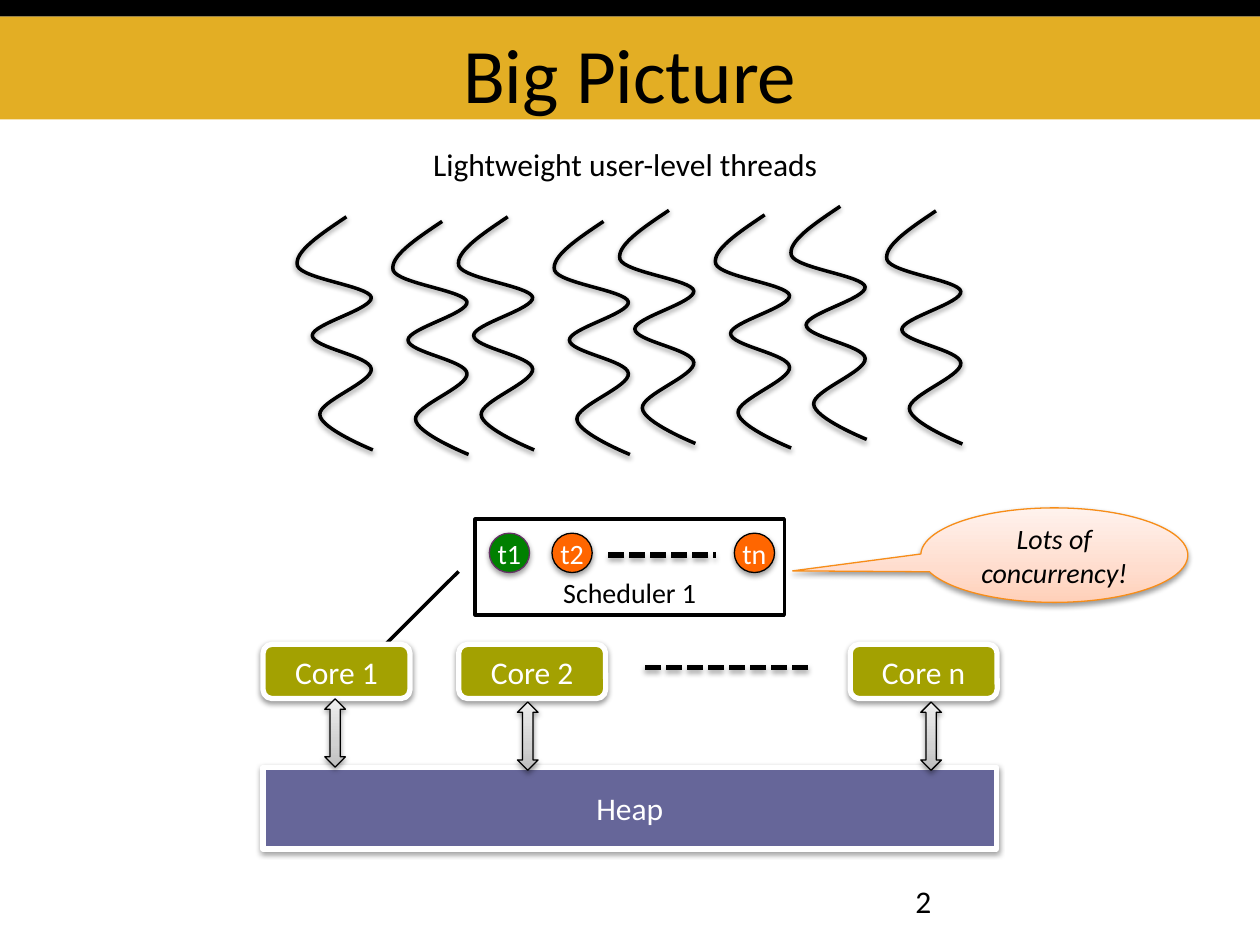
from dataclasses import dataclass

import lxml.etree
import pptx
import pptx.dml.color
import pptx.enum.dml
import pptx.enum.shapes
import pptx.enum.text
import pptx.oxml.ns
import pptx.util

Pt = pptx.util.Pt
qn = pptx.oxml.ns.qn
SHAPE = pptx.enum.shapes.MSO_SHAPE
ANCHOR = pptx.enum.text.MSO_ANCHOR
ALIGN = pptx.enum.text.PP_ALIGN

FONT = "Calibri"
BLACK, WHITE, ORANGE = "000000", "FFFFFF", "FF6600"
PEACH = ((0, "FFD0B9"), (35, "FFDDCE"), (100, "FFF2ED"))
GREY = ((0, "BDBDBD"), (35, "D1D1D1"), (100, "EEEEEE"))
UNITS = 100  # thread path units per point

# One thread: cubic curves (control, control, end) relative to its start
WAVE = (
    ((-15.1, 10.1), (-30.2, 20.2), (-28, 28)),
    ((-25.2, 35.5), (13, 39.6), (14.2, 46)),
    ((15.1, 52.7), (-19.5, 61.2), (-19.5, 67.8)),
    ((-19.5, 74.8), (13.7, 79.4), (14.2, 86.9)),
    ((15.1, 94.5), (-15.8, 105.3), (-15.2, 113)),
    ((-15.1, 121), (15.1, 133.2), (15.1, 133.2)),
)


@dataclass
class Box:
    kind: int
    left: float
    top: float
    width: float
    height: float
    fill: str | tuple
    line: str | None = None
    line_width: float = 0.75
    text: str = ""
    size: int = 18
    color: str = WHITE
    italic: bool = False
    anchor: int = ANCHOR.MIDDLE
    tight: bool = False
    shadow: bool = True
    adjust: tuple = ()


def rgb(value: str) -> pptx.dml.color.RGBColor:
    return pptx.dml.color.RGBColor.from_string(value)


def add_shadow(properties, alpha: int = 38, blur: float = 3.1, distance: float = 1.6) -> None:
    effects = properties.find(qn("a:effectLst"))
    if effects is None:
        effects = lxml.etree.SubElement(properties, qn("a:effectLst"))
    outer = lxml.etree.SubElement(effects, qn("a:outerShdw"), blurRad=str(Pt(blur)),
                                  dist=str(Pt(distance)), dir="5400000", rotWithShape="0")
    tone = lxml.etree.SubElement(outer, qn("a:srgbClr"), val=BLACK)
    lxml.etree.SubElement(tone, qn("a:alpha"), val=str(alpha * 1000))


def set_gradient(shape, stops: tuple) -> None:
    shape.fill.gradient()
    shape.fill.gradient_angle = 90
    stop_list = shape._element.spPr.find(".//" + qn("a:gsLst"))
    for old in list(stop_list):
        stop_list.remove(old)
    for position, color in stops:
        stop = lxml.etree.SubElement(stop_list, qn("a:gs"), pos=str(position * 1000))
        lxml.etree.SubElement(stop, qn("a:srgbClr"), val=color)


def write(frame, text: str, size: int, color: str, align: int, italic: bool = False) -> None:
    paragraph = frame.paragraphs[0]
    paragraph.alignment = align
    run = paragraph.add_run()
    run.text = text
    run.font.name, run.font.size = FONT, Pt(size)
    run.font.color.rgb = rgb(color)
    if italic:
        run.font.italic = True


def add_box(slide, box: Box):
    shape = slide.shapes.add_shape(box.kind, Pt(box.left), Pt(box.top),
                                   Pt(box.width), Pt(box.height))
    for index, value in enumerate(box.adjust):
        shape.adjustments[index] = value
    if isinstance(box.fill, tuple):
        set_gradient(shape, box.fill)
    else:
        shape.fill.solid()
        shape.fill.fore_color.rgb = rgb(box.fill)
    if box.line:
        shape.line.color.rgb = rgb(box.line)
        shape.line.width = Pt(box.line_width)
    else:
        shape.line.fill.background()
    shape.shadow.inherit = False
    if box.shadow:
        add_shadow(shape._element.spPr)
    if box.text:
        frame = shape.text_frame
        frame.word_wrap = True
        frame.vertical_anchor = box.anchor
        if box.tight:
            frame.margin_left = frame.margin_right = Pt(0)
            frame.margin_top = frame.margin_bottom = Pt(0)
        write(frame, box.text, box.size, box.color, ALIGN.CENTER, box.italic)


def add_label(slide, left: float, top: float, width: float, height: float, text: str) -> None:
    label = slide.shapes.add_textbox(Pt(left), Pt(top), Pt(width), Pt(height))
    label.text_frame.word_wrap = True
    write(label.text_frame, text, 18, BLACK, ALIGN.LEFT)


def add_dashes(slide, left: float, right: float, y: float) -> None:
    dashes = slide.shapes.add_connector(pptx.enum.shapes.MSO_CONNECTOR.STRAIGHT,
                                        Pt(left), Pt(y), Pt(right), Pt(y))
    dashes.line.color.rgb = rgb(BLACK)
    dashes.line.width = Pt(3)
    dashes.line.dash_style = pptx.enum.dml.MSO_LINE.SQUARE_DOT
    add_shadow(dashes._element.spPr, 35, 3.1, 1.8)


def add_thread(slide, x: float, y: float) -> None:
    builder = slide.shapes.build_freeform(round(x * UNITS), round(y * UNITS),
                                          scale=Pt(1) / UNITS)
    ends = [curve[-1] for curve in WAVE]
    builder.add_line_segments([((x + dx) * UNITS, (y + dy) * UNITS) for dx, dy in ends],
                              close=False)
    thread = builder.convert_to_shape()
    # Bend each straight segment into its cubic curve
    left = min(dx for dx, _ in ends)
    outline = thread._element.spPr.find(".//" + qn("a:path"))
    for segment, curve in zip(outline.findall(qn("a:lnTo")), WAVE):
        bend = lxml.etree.SubElement(outline, qn("a:cubicBezTo"))
        for dx, dy in curve:
            lxml.etree.SubElement(bend, qn("a:pt"), x=str(round((dx - left) * UNITS)),
                                  y=str(round(dy * UNITS)))
        outline.replace(segment, bend)
    thread.fill.background()
    thread.line.color.rgb = rgb(BLACK)
    thread.line.width = Pt(2)
    thread.shadow.inherit = False
    add_shadow(thread._element.spPr)


def main() -> None:
    deck = pptx.Presentation()
    deck.slide_width, deck.slide_height = Pt(720), Pt(540)
    slide = deck.slides.add_slide(deck.slide_layouts[5])

    # Header bands, with the title in front of them
    add_box(slide, Box(SHAPE.RECTANGLE, 0, 9.4, 720, 58.8, "E3AE24", shadow=False))
    add_box(slide, Box(SHAPE.RECTANGLE, 0, 0, 720, 9.4, BLACK, shadow=False))
    title = slide.shapes.title
    slide.shapes._spTree.append(title._element)
    title.left, title.top, title.width, title.height = Pt(36), Pt(9.4), Pt(648), Pt(58.8)
    title.text_frame.auto_size = pptx.enum.text.MSO_AUTO_SIZE.NONE
    title.text_frame.vertical_anchor = ANCHOR.BOTTOM
    title.text_frame.margin_bottom = Pt(0)
    write(title.text_frame, "Big Picture", 44, BLACK, ALIGN.CENTER)
    add_label(slide, 516, 500.4, 168, 28.8, "2")

    # User-level threads, in pairs
    for x, y in ((198, 123.9), (290.2, 123.9), (382.3, 120.2), (480.2, 117.9)):
        add_thread(slide, x, y)
        add_thread(slide, x + 54.7, y + 2.6)
    add_label(slide, 240.5, 79.2, 237.6, 28.8, "Lightweight user-level threads")

    # Scheduler and its queue
    add_box(slide, Box(SHAPE.LINE_CALLOUT_1, 271.6, 296.6, 176.6, 54.8, WHITE, BLACK, 2,
                       "Scheduler 1", 16, BLACK, anchor=ANCHOR.BOTTOM, shadow=False,
                       adjust=(0.547, -0.054, 1.353, -0.305)))
    for name, left, fill, line in (("t1", 279.6, "008000", "653165"),
                                   ("t2", 315.4, ORANGE, BLACK),
                                   ("tn", 419.6, ORANGE, BLACK)):
        add_box(slide, Box(SHAPE.OVAL, left, 304.7, 23, 22.5, fill, line,
                           text=name, size=16, tight=True))
    add_dashes(slide, 347.6, 409, 317.2)
    add_box(slide, Box(SHAPE.OVAL_CALLOUT, 526.2, 290.2, 152.6, 54, PEACH, "F78D18",
                       text="Lots of concurrency!", size=16, color=BLACK, italic=True,
                       tight=True, adjust=(-0.98, 0.167)))

    # Cores over the shared heap
    for name, left in (("Core 1", 150.3), ("Core 2", 262.1), ("Core n", 485.8)):
        add_box(slide, Box(SHAPE.ROUNDED_RECTANGLE, left, 368.2, 84, 31, "A3A101",
                           WHITE, 3, name))
    add_dashes(slide, 368.6, 463.7, 381.6)
    add_box(slide, Box(SHAPE.RECTANGLE, 150.3, 438.4, 419.2, 46.8, "666699", WHITE, 3, "Heap"))
    for left, top in ((185.6, 399.4), (295.7, 401.2), (526.2, 401.2)):
        add_box(slide, Box(SHAPE.UP_DOWN_ARROW, left, top, 11.8, 39, GREY, BLACK))

    deck.save("out.pptx")


if __name__ == "__main__":
    main()
